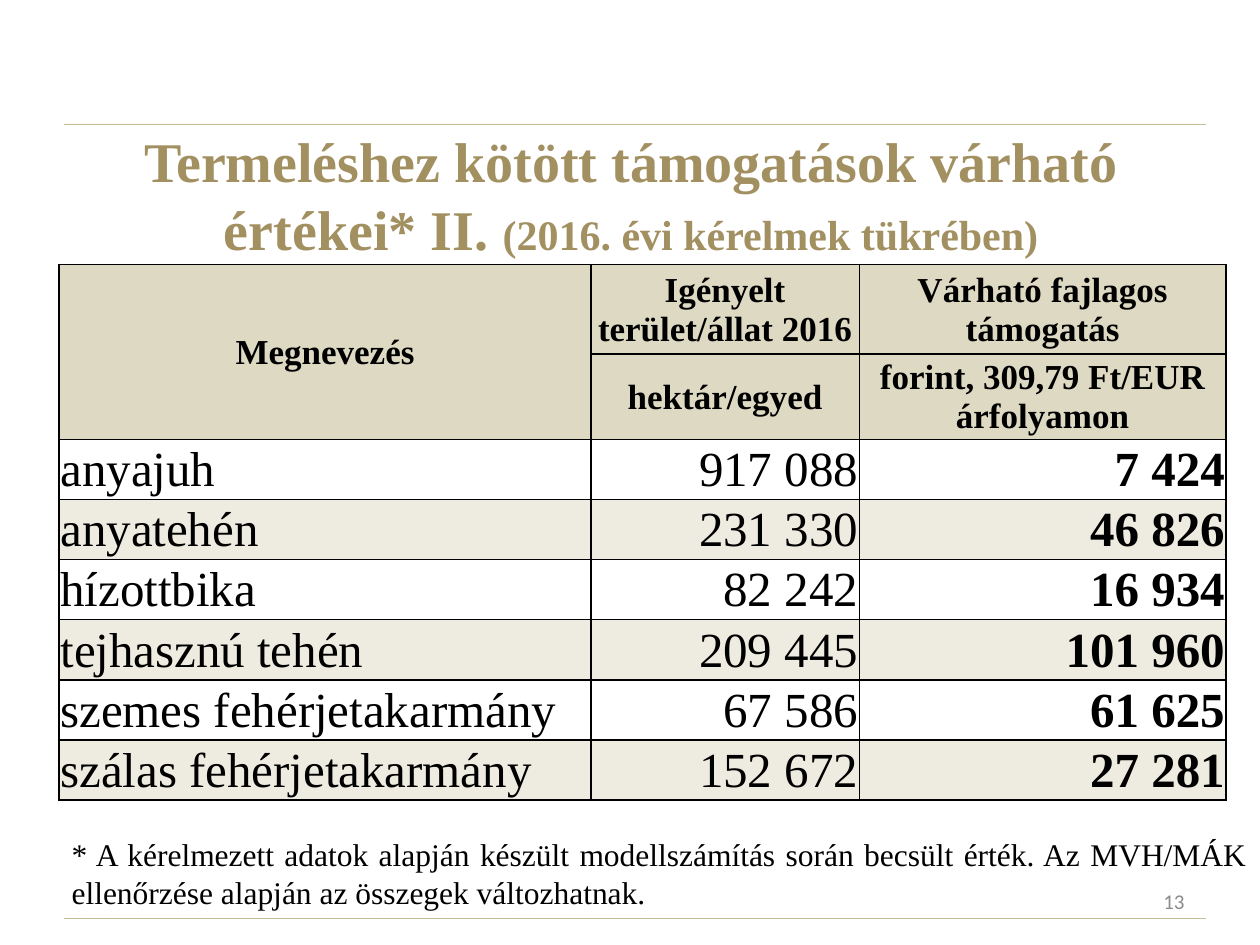
from typing import NamedTuple

import pptx
import pptx.dml.color
import pptx.enum.shapes
import pptx.enum.text
import pptx.oxml.ns
import pptx.util
from lxml import etree

Inches = pptx.util.Inches
Pt = pptx.util.Pt
Align = pptx.enum.text.PP_ALIGN
Anchor = pptx.enum.text.MSO_ANCHOR
qn = pptx.oxml.ns.qn

SERIF = "Times New Roman"
BLACK = "000000"
GOLD = "A29061"
RULE = "C4BD97"
HEADER_FILL = "DDD9C3"
BAND_FILL = "EEECE1"


class Subsidy(NamedTuple):
    name: str
    claimed: str
    rate: str


class Column(NamedTuple):
    width: float
    align: Align
    bold: bool


SUBSIDIES = [
    Subsidy("anyajuh", "917 088", "7 424"),
    Subsidy("anyatehén", "231 330", "46 826"),
    Subsidy("hízottbika", "82 242", "16 934"),
    Subsidy("tejhasznú tehén", "209 445", "101 960"),
    Subsidy("szemes fehérjetakarmány", "67 586", "61 625"),
    Subsidy("szálas fehérjetakarmány", "152 672", "27 281"),
]
COLUMNS = [
    Column(4.22, Align.LEFT, False),
    Column(2.13, Align.RIGHT, False),
    Column(2.91, Align.RIGHT, True),
]
HEADERS = [
    ["Megnevezés", "Igényelt terület/állat 2016", "Várható fajlagos támogatás"],
    ["", "hektár/egyed", "forint, 309,79 Ft/EUR árfolyamon"],
]
HEADER_HEIGHTS = [0.71, 0.64]
ROW_HEIGHT = 0.44


def rgb(value: str) -> pptx.dml.color.RGBColor:
    return pptx.dml.color.RGBColor.from_string(value)


def add_span(para, text: str, *, size: float, color: str = BLACK,
             bold: bool = False, font: str = SERIF) -> None:
    span = para.add_run()
    span.text = text
    span.font.name = font
    span.font.size = Pt(size)
    span.font.bold = bold
    span.font.color.rgb = rgb(color)


def add_box(page, left: float, top: float, width: float, height: float,
            *, align: Align, anchor: Anchor = Anchor.MIDDLE):
    """Add a wrapping text box and return its first paragraph."""
    box = page.shapes.add_textbox(Inches(left), Inches(top),
                                  Inches(width), Inches(height))
    box.text_frame.word_wrap = True
    box.text_frame.vertical_anchor = anchor
    para = box.text_frame.paragraphs[0]
    para.alignment = align
    return para


def add_rule(page, y: float) -> None:
    rule = page.shapes.add_connector(pptx.enum.shapes.MSO_CONNECTOR.STRAIGHT,
                                     Inches(0.51), Inches(y), Inches(9.57), Inches(y))
    rule.line.color.rgb = rgb(RULE)
    rule.line.width = Pt(0.75)
    etree.SubElement(rule._element.spPr, qn("a:effectLst"))


def add_borders(cell) -> None:
    properties = cell._tc.get_or_add_tcPr()
    for side in ("a:lnL", "a:lnR", "a:lnT", "a:lnB"):
        line = etree.SubElement(properties, qn(side), w=str(Pt(1)))
        fill = etree.SubElement(line, qn("a:solidFill"))
        etree.SubElement(fill, qn("a:srgbClr"), val=BLACK)


def fill_cell(cell, text: str, *, size: float, bold: bool,
              align: Align, fill: str | None) -> None:
    add_borders(cell)
    if fill:
        cell.fill.solid()
        cell.fill.fore_color.rgb = rgb(fill)
    else:
        cell.fill.background()
    cell.vertical_anchor = Anchor.MIDDLE
    cell.margin_left = cell.margin_right = cell.margin_top = Inches(0.01)
    cell.margin_bottom = 0
    if text:
        para = cell.text_frame.paragraphs[0]
        para.alignment = align
        add_span(para, text, size=size, bold=bold)


def add_subsidy_table(page) -> None:
    heights = HEADER_HEIGHTS + [ROW_HEIGHT] * len(SUBSIDIES)
    table = page.shapes.add_table(
        len(heights), len(COLUMNS), Inches(0.47), Inches(2.1),
        Inches(sum(column.width for column in COLUMNS)), Inches(sum(heights))).table
    for index, column in enumerate(COLUMNS):
        table.columns[index].width = Inches(column.width)
    for index, height in enumerate(heights):
        table.rows[index].height = Inches(height)

    # Header rows, the first column spanning both
    for row, labels in enumerate(HEADERS):
        for index, label in enumerate(labels):
            fill_cell(table.cell(row, index), label, size=20, bold=True,
                      align=Align.CENTER, fill=HEADER_FILL)
    table.cell(0, 0).merge(table.cell(1, 0))

    # Banded data rows
    for row, subsidy in enumerate(SUBSIDIES):
        for index, (column, text) in enumerate(zip(COLUMNS, subsidy)):
            fill_cell(table.cell(row + len(HEADERS), index), text, size=28,
                      bold=column.bold, align=column.align,
                      fill=BAND_FILL if row % 2 else None)


def main() -> None:
    deck = pptx.Presentation()
    deck.slide_width = Inches(10)
    deck.slide_height = Inches(7.5)
    page = deck.slides.add_slide(deck.slide_layouts[6])

    # Rules above and below the content
    for y in (7.29, 0.99):
        add_rule(page, y)

    # Title
    title = add_box(page, 0.51, 1.07, 9, 0.94, align=Align.CENTER)
    add_span(title, "Termeléshez kötött támogatások várható értékei* II. ",
             size=32, color=GOLD, bold=True)
    add_span(title, "(2016. évi kérelmek tükrében)", size=24, color=GOLD, bold=True)

    add_subsidy_table(page)

    # Footnote and page number
    footnote = add_box(page, 0.47, 6.58, 9.53, 0.71,
                       align=Align.JUSTIFY, anchor=Anchor.TOP)
    add_span(footnote, "* A kérelmezett adatok alapján készült modellszámítás során "
             "becsült érték. Az MVH/MÁK ellenőrzése alapján az összegek "
             "változhatnak.", size=18)
    number = add_box(page, 7.17, 6.95, 2.33, 0.4, align=Align.RIGHT)
    add_span(number, "13", size=12, color="8C8C8C", font="Calibri")

    deck.save("out.pptx")


if __name__ == "__main__":
    main()
